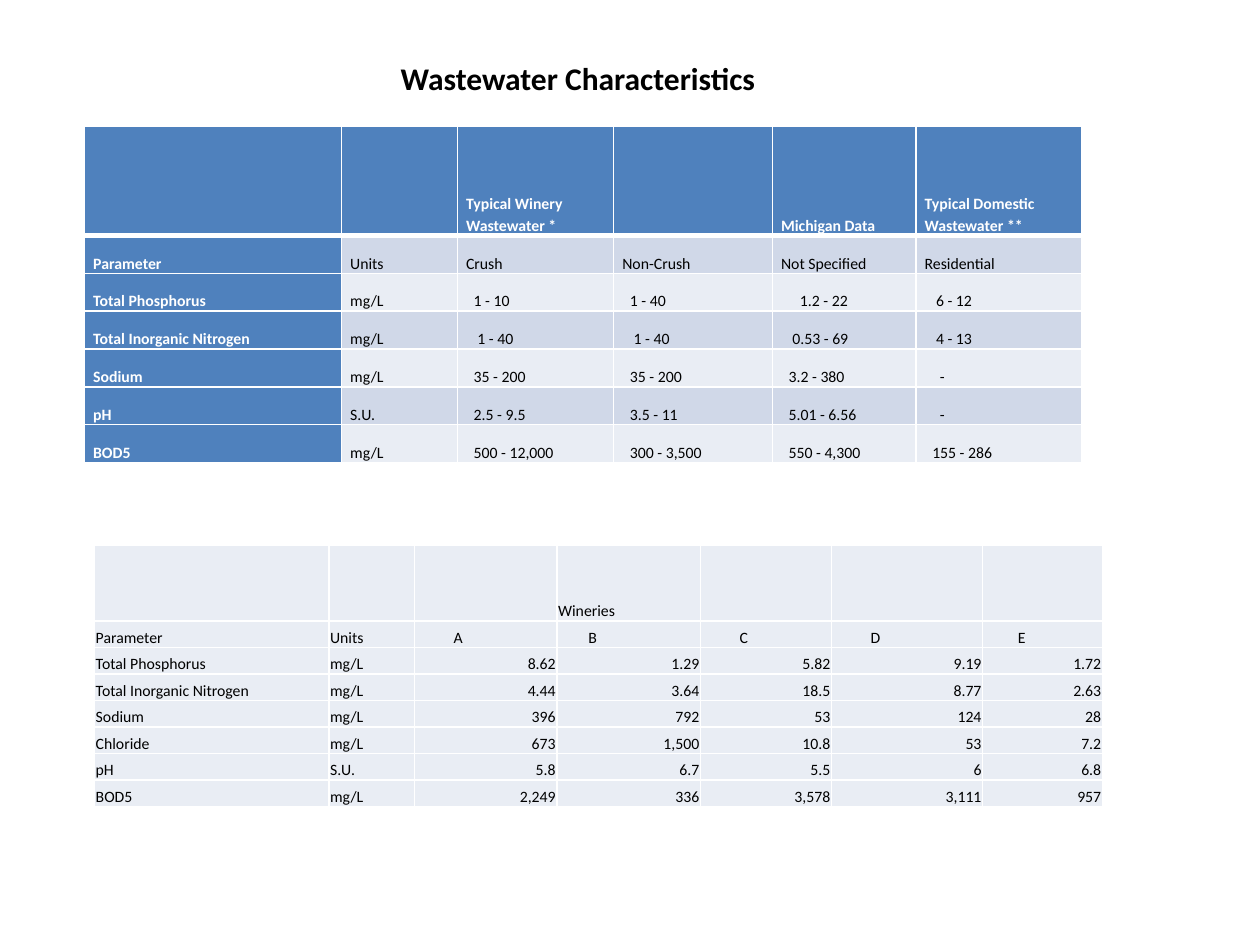
from lxml import etree
from pptx import Presentation
from pptx.dml.color import RGBColor
from pptx.enum.text import MSO_ANCHOR, MSO_AUTO_SIZE, PP_ALIGN
from pptx.oxml.ns import qn
from pptx.util import Inches, Pt

BOTTOM, TOP = MSO_ANCHOR.BOTTOM, MSO_ANCHOR.TOP
FIT_SHAPE = MSO_AUTO_SIZE.SHAPE_TO_FIT_TEXT
LEFT, RIGHT = PP_ALIGN.LEFT, PP_ALIGN.RIGHT

COLORS = {
    "black": "000000",
    "white": "FFFFFF",
    "blue": "4F81BD",
    "band_dark": "D0D8E8",
    "band_light": "E9EDF4",
}
TITLE_ONLY = 5
INDENT_STEP = 0.03  # inches per indent level inside a cell

TYPICAL_COLUMNS = [2.04, 0.92, 1.24, 1.26, 1.14, 1.32]
TYPICAL_HEIGHTS = [0.87] + [0.3] * 6
TYPICAL_RANGES = [
    ["", "", "Typical Winery Wastewater *", "", "Michigan Data",
     "Typical Domestic Wastewater **"],
    ["Parameter", "Units", "Crush", "Non-Crush", "Not Specified", "Residential"],
    ["Total Phosphorus", "mg/L", "1 - 10", "1 - 40", "1.2 - 22", "6 - 12"],
    ["Total Inorganic Nitrogen", "mg/L", "1 - 40", "1 - 40", "0.53 - 69", "4 - 13"],
    ["Sodium", "mg/L", "35 - 200", "35 - 200", "3.2 - 380", "-"],
    ["pH", "S.U.", "2.5 - 9.5", "3.5 - 11", "5.01 - 6.56", "-"],
    ["BOD5", "mg/L", "500 - 12,000", "300 - 3,500", "550 - 4,300", "155 - 286"],
]
# Indent levels of the value columns, by row
TYPICAL_INDENTS = {2: [2, 2, 5, 3], 3: [3, 3, 3, 3], 4: [2, 2, 2, 4],
                   5: [2, 2, 2, 4], 6: [2, 2, 2, 2]}

WINERY_COLUMNS = [1.86, 0.68, 1.13, 1.14, 1.04, 1.2, 0.95]
WINERY_HEIGHTS = [0.6] + [0.21] * 7
WINERY_RESULTS = [
    ["", "", "", "Wineries", "", "", ""],
    ["Parameter", "Units", "A", "B", "C", "D", "E"],
    ["Total Phosphorus", "mg/L", "8.62", "1.29", "5.82", "9.19", "1.72"],
    ["Total Inorganic Nitrogen", "mg/L", "4.44", "3.64", "18.5", "8.77", "2.63"],
    ["Sodium", "mg/L", "396", "792", "53", "124", "28"],
    ["Chloride", "mg/L", "673", "1,500", "10.8", "53", "7.2"],
    ["pH", "S.U.", "5.8", "6.7", "5.5", "6", "6.8"],
    ["BOD5", "mg/L", "2,249", "336", "3,578", "3,111", "957"],
]
WINERY_INDENTS = {1: [10, 8, 10, 10, 9]}


def typical_style(row, column):
    """Fill, text colour, bold and alignment of a cell of typical ranges."""
    if row == 0 or column == 0:
        return "blue", "white", True, LEFT
    return ("band_dark" if row % 2 else "band_light"), "black", False, LEFT


def winery_style(row, column):
    """Fill, text colour, bold and alignment of a cell of winery results."""
    is_value = row > 1 and column > 1
    return "band_light", "black", False, RIGHT if is_value else LEFT


class SlideBuilder:
    font = "Calibri"
    title_size = 18
    cell_size = 9

    def __init__(self, slide):
        self.slide = slide

    def format_runs(self, paragraph, size, color, bold):
        for run in paragraph.runs:
            run.font.name = self.font
            run.font.size = Pt(size)
            run.font.bold = bold
            run.font.color.rgb = RGBColor.from_string(COLORS[color])

    def title(self, text, left, top, width, height):
        heading = self.slide.shapes.title
        heading.left, heading.top = Inches(left), Inches(top)
        heading.width, heading.height = Inches(width), Inches(height)
        frame = heading.text_frame
        frame.text = text
        frame.word_wrap = False
        frame.auto_size = FIT_SHAPE
        frame.vertical_anchor = TOP
        frame.paragraphs[0].alignment = LEFT
        self.format_runs(frame.paragraphs[0], self.title_size, "black", True)

    def borders(self, cell, widths):
        properties = cell._tc.get_or_add_tcPr()
        for side, width in zip("LRTB", widths):
            line = etree.SubElement(properties, qn(f"a:ln{side}"), w=str(Pt(width)))
            fill = etree.SubElement(line, qn("a:solidFill"))
            etree.SubElement(fill, qn("a:srgbClr"), val=COLORS["white"])

    def table(self, left, top, columns, heights, rows, style, indents,
              insets, spacing=1.0, header_rule=1):
        table = self.slide.shapes.add_table(
            len(rows), len(columns), Inches(left), Inches(top),
            Inches(sum(columns)), Inches(sum(heights))).table
        table.first_row = table.horz_banding = False
        for column, width in zip(table.columns, columns):
            column.width = Inches(width)
        for row, height in zip(table.rows, heights):
            row.height = Inches(height)

        side, upper = insets
        for r, values in enumerate(rows):
            # The rule under the header is shared by the first two rows
            rules = (1, 1, header_rule if r == 1 else 1, header_rule if r == 0 else 1)
            levels = [0, 0] + indents.get(r, [0] * (len(columns) - 2))
            for c, (value, level) in enumerate(zip(values, levels)):
                fill, color, bold, alignment = style(r, c)
                cell = table.cell(r, c)
                self.borders(cell, rules)
                cell.fill.solid()
                cell.fill.fore_color.rgb = RGBColor.from_string(COLORS[fill])
                cell.vertical_anchor = BOTTOM
                cell.margin_left = Inches(side + level * INDENT_STEP)
                cell.margin_right = Inches(side)
                cell.margin_top, cell.margin_bottom = Inches(upper), 0
                if value:
                    paragraph = cell.text_frame.paragraphs[0]
                    paragraph.text = value
                    paragraph.alignment = alignment
                    paragraph.line_spacing = spacing
                    self.format_runs(paragraph, self.cell_size, color, bold)


def main():
    presentation = Presentation()
    presentation.slide_width, presentation.slide_height = Inches(10), Inches(7.5)
    layout = presentation.slide_layouts[TITLE_ONLY]
    builder = SlideBuilder(presentation.slides.add_slide(layout))

    # Heading
    builder.title("Wastewater Characteristics", 3.08, 0.42, 3.04, 0.4)

    # Typical ranges by kind of wastewater
    builder.table(0.67, 1, TYPICAL_COLUMNS, TYPICAL_HEIGHTS, TYPICAL_RANGES,
                  typical_style, TYPICAL_INDENTS, insets=(0.07, 0),
                  spacing=1.15, header_rule=3)

    # Results of the five wineries
    builder.table(0.75, 4.33, WINERY_COLUMNS, WINERY_HEIGHTS, WINERY_RESULTS,
                  winery_style, WINERY_INDENTS, insets=(0.01, 0.01))

    presentation.save("out.pptx")


if __name__ == "__main__":
    main()
